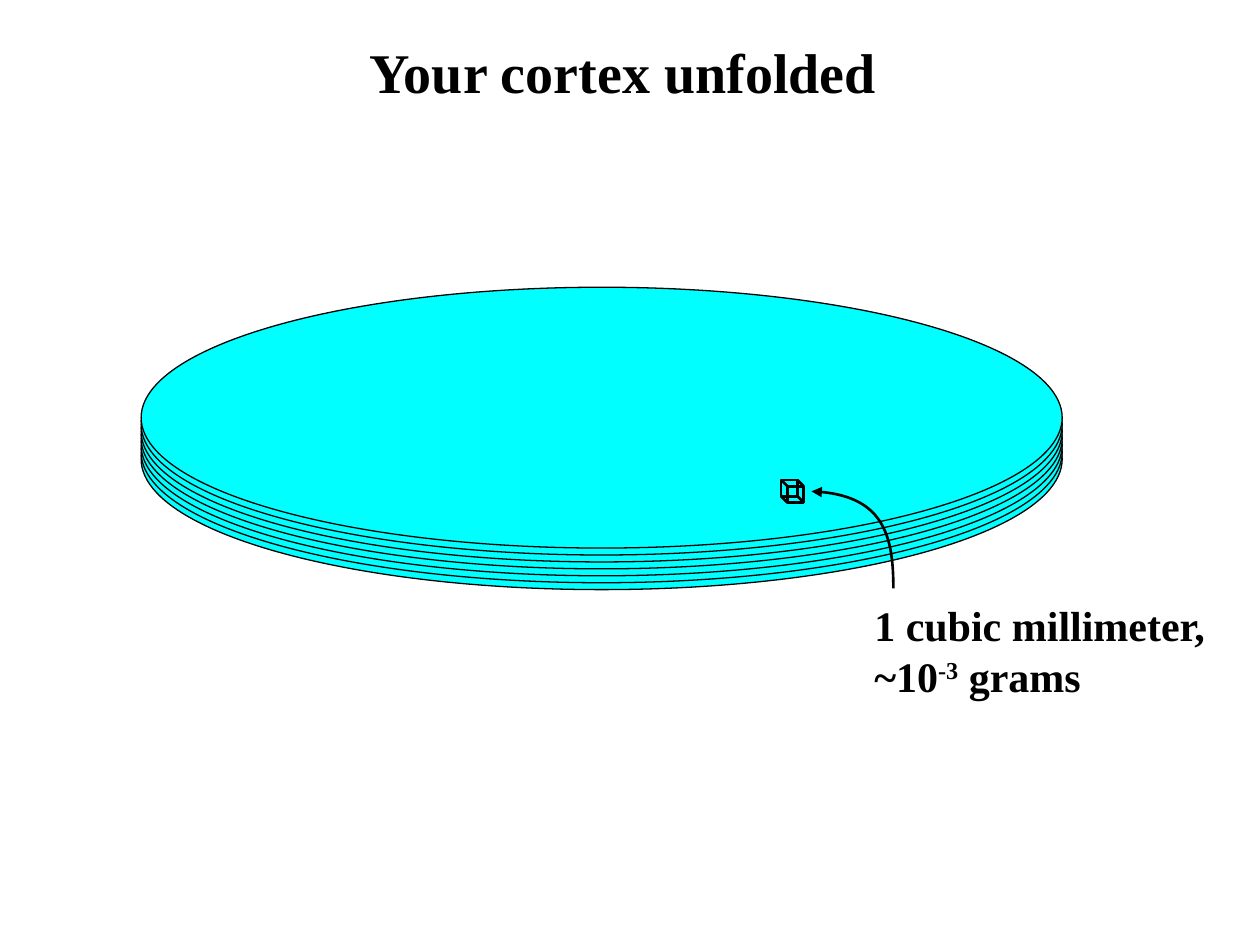
from itertools import product

from lxml import etree
from pptx import Presentation
from pptx.dml.color import RGBColor
from pptx.enum.shapes import MSO_CONNECTOR, MSO_SHAPE
from pptx.enum.text import MSO_ANCHOR, MSO_AUTO_SIZE, PP_ALIGN
from pptx.oxml.ns import qn
from pptx.util import Inches, Pt

OVAL, RECT = MSO_SHAPE.OVAL, MSO_SHAPE.RECTANGLE
LINE = MSO_CONNECTOR.STRAIGHT
LEFT, CENTER = PP_ALIGN.LEFT, PP_ALIGN.CENTER
BLACK = RGBColor(0, 0, 0)
CYAN = RGBColor(0, 255, 255)
FONT = "Times New Roman"

# Each line is a list of (text, superscript) pieces
TITLE = [[("Your cortex unfolded", False)]]
LABEL = [
    [("1 cubic millimeter,", False)],
    [("~10", False), ("-3", True), (" grams", False)],
]
TITLE_BOX = (2.81, 0.25, 4.27, 0.63)
LABEL_BOX = (6.84, 4.71, 2.85, 0.91)

LAYERS = 7
DISC = (1.12, 2.28, 7.31, 2.07)  # top layer
DROP = 0.33                      # from top layer to bottom layer
CUBE = (6.2, 3.81)
SIDE, DEPTH = 0.13, 0.05
ARROW = [(7.09, 4.67), (7.09, 4.26), (7.01, 3.92), (6.44, 3.9)]  # Bezier points


def box(vals):
    return [Inches(v) for v in vals]


def write(shape, lines, size, align=LEFT):
    frame = shape.text_frame
    frame.word_wrap = False
    frame.auto_size = MSO_AUTO_SIZE.SHAPE_TO_FIT_TEXT
    frame.vertical_anchor = MSO_ANCHOR.TOP
    for i, line in enumerate(lines):
        para = frame.add_paragraph() if i else frame.paragraphs[0]
        para.alignment = align
        for text, raised in line:
            run = para.add_run()
            run.text = text
            font = run.font
            font.name, font.size, font.bold = FONT, Pt(size), True
            font.color.rgb = BLACK
            if raised:
                run._r.get_or_add_rPr().set("baseline", "30000")


def style(shape, width, fill=None):
    shape.shadow.inherit = False
    shape.line.color.rgb = BLACK
    shape.line.width = Pt(width)
    if fill is None:
        shape.fill.background()
    else:
        shape.fill.solid()
        shape.fill.fore_color.rgb = fill


def draw_disc(shapes):
    left, top, width, height = DISC
    for i in reversed(range(LAYERS)):
        y = top + DROP * i / (LAYERS - 1)
        style(shapes.add_shape(OVAL, *box((left, y, width, height))), 0.75, CYAN)


def draw_cube(shapes):
    group = shapes.add_group_shape().shapes
    x, y = CUBE
    for off in (0, DEPTH):
        face = group.add_shape(RECT, *box((x + off, y + off, SIDE, SIDE)))
        style(face, 1.5)
    for dx, dy in product((0, SIDE), repeat=2):
        ends = (x + dx, y + dy, x + dx + DEPTH, y + dy + DEPTH)
        edge = group.add_connector(LINE, *box(ends))
        edge.line.color.rgb = BLACK
        edge.line.width = Pt(1.5)
        etree.SubElement(edge._element.spPr, qn("a:effectLst"))


def draw_arrow(shapes):
    """Draw the curve as one cubic segment with a triangle at its end."""
    points = [box(p) for p in ARROW]
    start, end = points[0], points[-1]
    build = shapes.build_freeform(*start)
    build.add_line_segments([end], close=False)
    arrow = build.convert_to_shape()
    style(arrow, 1.5)
    segment = next(arrow._element.iter(qn("a:lnTo")))
    curve = etree.Element(qn("a:cubicBezTo"))
    for px, py in points[1:]:
        etree.SubElement(curve, qn("a:pt"),
                         x=str(px - arrow.left), y=str(py - arrow.top))
    segment.getparent().replace(segment, curve)
    etree.SubElement(arrow.line._get_or_add_ln(), qn("a:tailEnd"), type="triangle")


def main():
    prs = Presentation()
    prs.slide_width, prs.slide_height = Inches(10), Inches(7.5)
    slide = prs.slides.add_slide(prs.slide_layouts[5])
    shapes = slide.shapes
    title = shapes.title
    title.left, title.top, title.width, title.height = box(TITLE_BOX)
    write(title, TITLE, 32, CENTER)
    draw_disc(shapes)
    draw_cube(shapes)
    draw_arrow(shapes)
    write(shapes.add_textbox(*box(LABEL_BOX)), LABEL, 24)
    prs.save("out.pptx")


if __name__ == "__main__":
    main()
